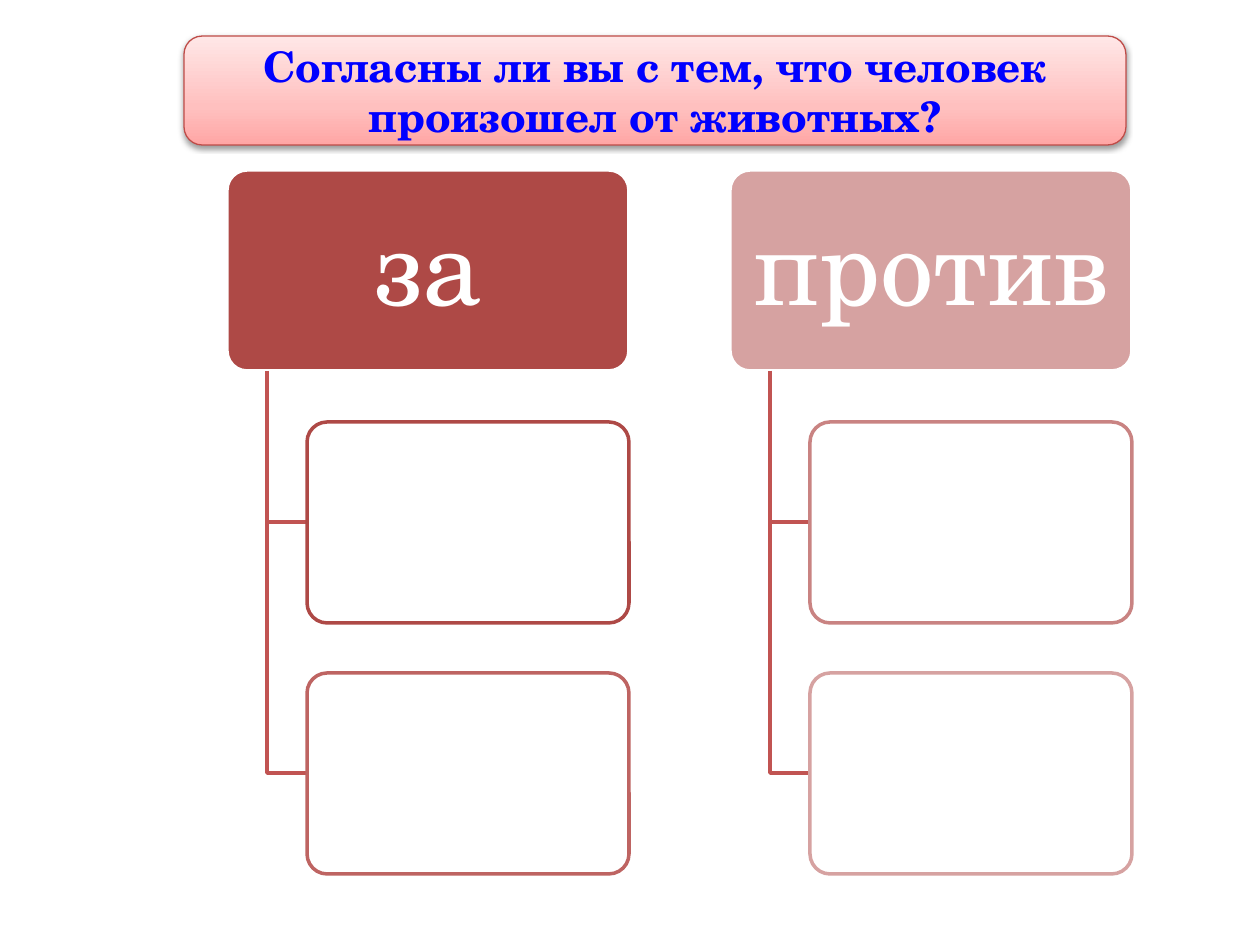
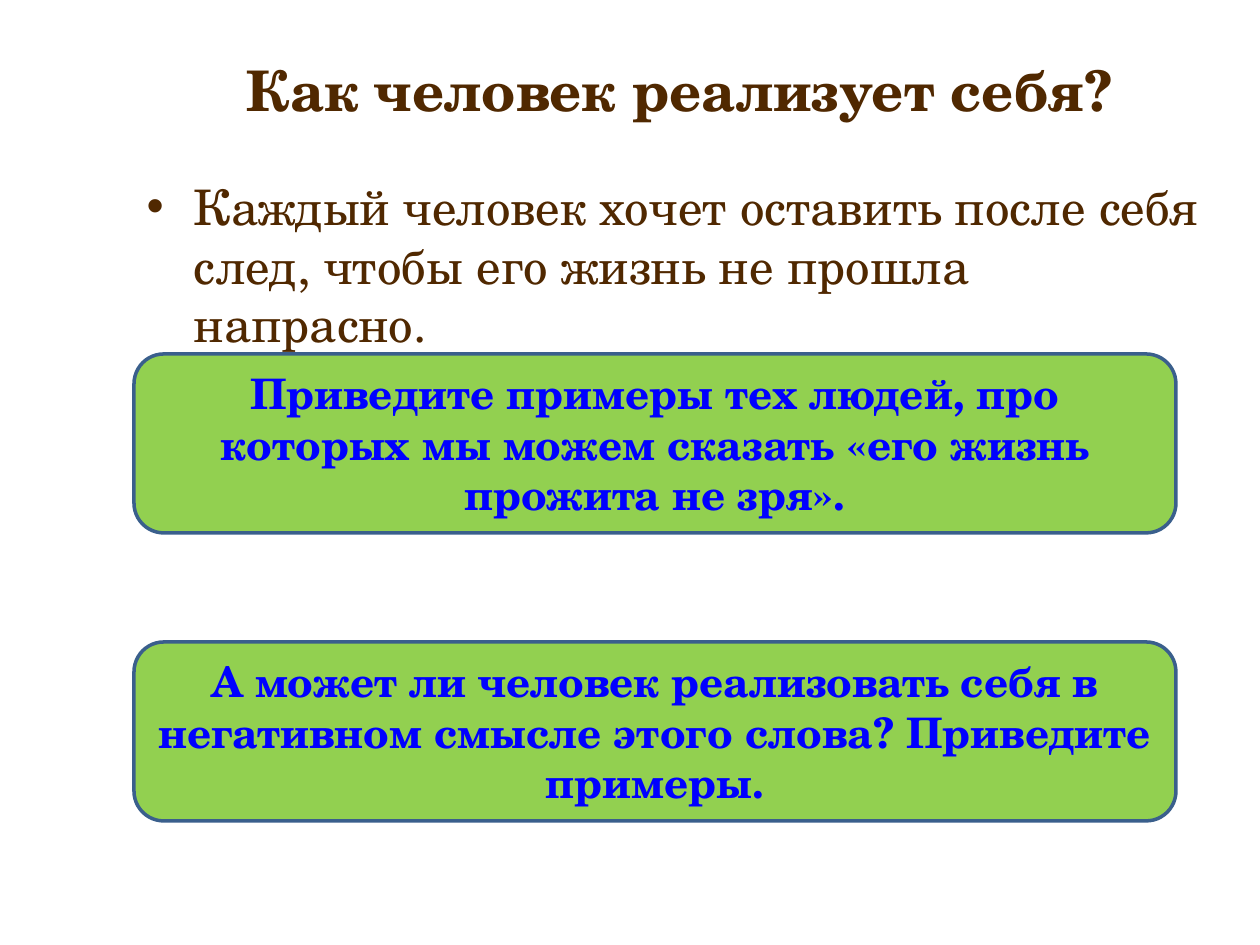
"""Builds two lesson slides: a for-and-against chart and a slide on self-realisation."""
from copy import deepcopy

from lxml import etree
from pptx import Presentation
from pptx import util as u
from pptx.dml.color import RGBColor
from pptx.enum import shapes, text
from pptx.oxml.ns import qn

PX = 914400 // 126
FONT = "TeX Gyre Schola"
BLUE, BROWN, WHITE = "0000FF", "502800", "FFFFFF"
GREEN, GREEN_EDGE = "92D050", "3A5F8C"
ELBOW, BANNER_EDGE = "C15452", "BF4C48"
rgb = RGBColor.from_string


def write(tf, words, size=24, color=BLUE, bold=True, align=text.PP_ALIGN.CENTER,
          anchor=text.MSO_ANCHOR.MIDDLE, spacing=None):
    tf.word_wrap = True
    tf.auto_size = text.MSO_AUTO_SIZE.NONE
    tf.vertical_anchor = anchor
    p = tf.paragraphs[0]
    p.alignment = align
    p.space_before = u.Pt(0)
    p.line_spacing = spacing
    r = p.add_run()
    r.text = words
    r.font.name = FONT
    r.font.size = u.Pt(size)
    r.font.bold = bold
    r.font.color.rgb = rgb(color)


def box(s, at, fill, line, width=2, adj=None):
    sp = s.shapes.add_shape(shapes.MSO_SHAPE.ROUNDED_RECTANGLE, *[v * PX for v in at])
    sp.shadow.inherit = False
    sp.fill.solid()
    sp.fill.fore_color.rgb = rgb(fill)
    sp.line.color.rgb = rgb(line)
    sp.line.width = u.Pt(width)
    if adj is not None:
        sp.adjustments[0] = adj
    return sp


prs = Presentation()
prs.slide_width, prs.slide_height = u.Inches(10), u.Inches(7.5)

s = prs.slides.add_slide(prs.slide_layouts[6])
columns = [("за", "AE4946", ["AE4946", "BE6462"]),
           ("против", "D6A2A1", ["C98382", "D6A2A1"])]
for i, (heading, fill, edges) in enumerate(columns):
    left = 227 + 503 * i
    sp = box(s, (left, 170, 402, 201), fill, WHITE, adj=0.1)
    sp.text_frame.margin_left = sp.text_frame.margin_right = 16 * PX
    write(sp.text_frame, heading, size=61, color=WHITE, bold=False, spacing=0.9)
    for j, edge in enumerate(edges):
        top = 422 + 251 * j
        stem, middle = left + 40, top + 100
        fb = s.shapes.build_freeform(stem, 371, scale=PX)
        fb.add_line_segments([(stem, middle), (left + 80, middle)], close=False)
        elbow = fb.convert_to_shape()
        elbow.shadow.inherit = False
        elbow.fill.background()
        elbow.line.color.rgb = rgb(ELBOW)
        elbow.line.width = u.Pt(2)
        box(s, (left + 80, top, 322, 201), WHITE, edge, adj=0.1)

banner = box(s, (184, 36, 942, 109), WHITE, BANNER_EDGE, width=0.75)
banner.fill.gradient()
banner.fill.gradient_angle = 90
stops = banner.element.spPr.find(".//" + qn("a:gsLst"))
stops.insert(1, deepcopy(stops[0]))
for stop, position, color in zip(banner.fill.gradient_stops, (0, 0.35, 1),
                                 ("FFA6A5", "FFC0BF", "FFE7E7")):
    stop.position = position
    stop.color.rgb = rgb(color)
effects = banner.element.spPr.find(qn("a:effectLst"))
shadow = etree.SubElement(effects, qn("a:outerShdw"), blurRad="40000", dist="20000",
                          dir="5400000", rotWithShape="0")
black = etree.SubElement(shadow, qn("a:srgbClr"), val="000000")
etree.SubElement(black, qn("a:alpha"), val="38000")
write(banner.text_frame, "Согласны ли вы с тем, что человек произошел от животных?")

s = prs.slides.add_slide(prs.slide_layouts[1])
title, body = s.shapes.title, s.placeholders[1]
for sp, top, height in ((title, 38, 102), (body, 170, 704)):
    sp.left, sp.top, sp.width, sp.height = 134 * PX, top * PX, 1091 * PX, height * PX
write(title.text_frame, "Как человек реализует себя?", size=32, color=BROWN)
write(body.text_frame,
      "Каждый человек хочет оставить после себя след, чтобы его жизнь не прошла напрасно.",
      size=28, color=BROWN, bold=False, align=text.PP_ALIGN.LEFT, anchor=text.MSO_ANCHOR.TOP)
tasks = ["Приведите примеры тех людей, про которых мы можем сказать «его жизнь прожита не зря».",
         "А может ли человек реализовать себя в негативном смысле этого слова? Приведите примеры."]
for i, task in enumerate(tasks):
    sp = box(s, (134, 354 + 288 * i, 1042, 179), GREEN, GREEN_EDGE)
    write(sp.text_frame, task)

prs.save("out.pptx")
